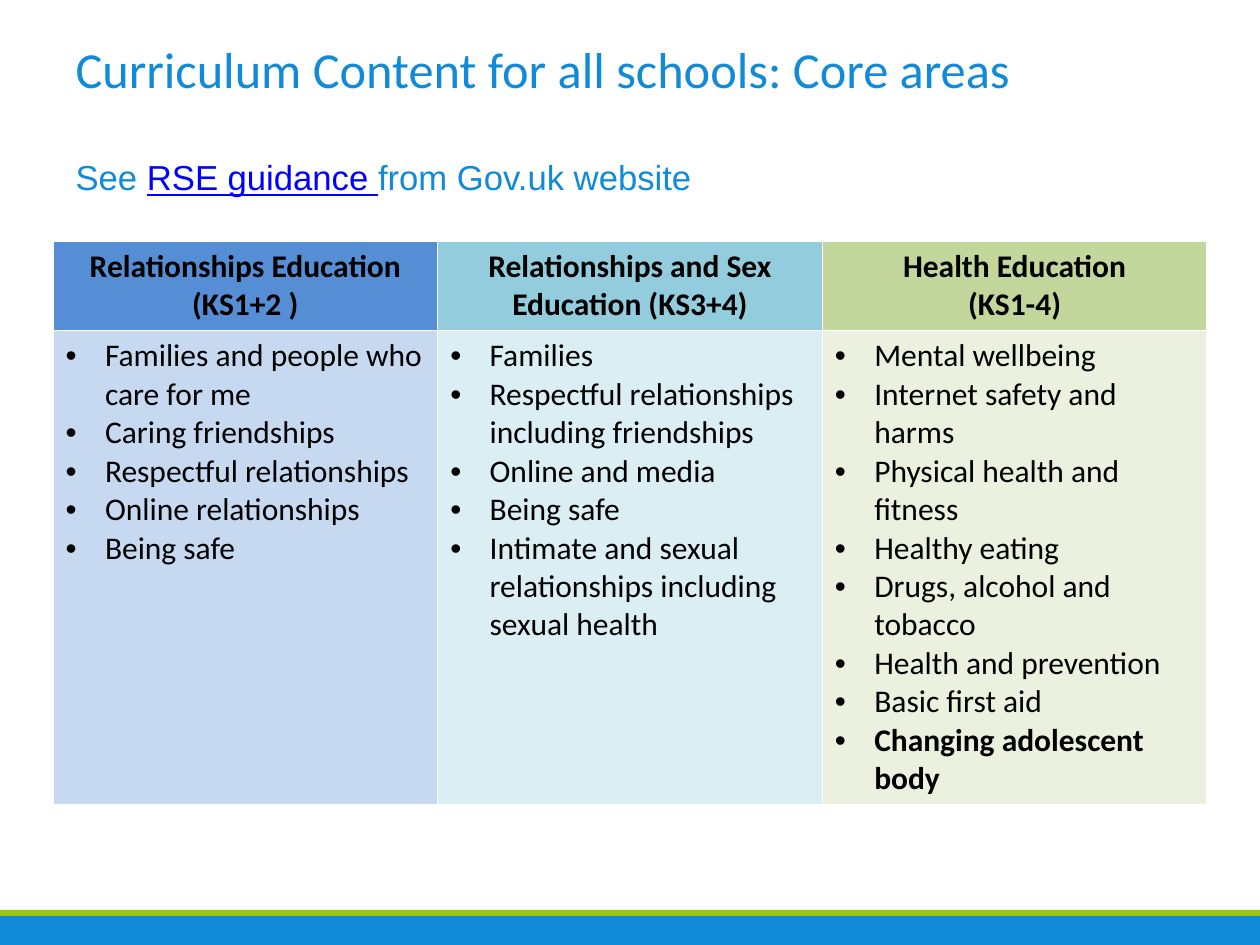
from lxml import etree
from pptx import Presentation
from pptx import util as u
from pptx.dml import color
from pptx.enum import shapes, text
from pptx.oxml import ns


def paint(fill, value):
    fill.solid()
    fill.fore_color.rgb = color.RGBColor.from_string(value)


def assign(target, values):
    for name, value in values.items():
        setattr(target, name, value)


presentation = Presentation()
assign(presentation, {"slide_width": u.Pt(720), "slide_height": u.Pt(540)})
slide = presentation.slides.add_slide(presentation.slide_layouts[5])

for top, height, shade in [(520, 10.8, "A0C50D"), (523.4, 16.6, "118AD7")]:
    band = slide.shapes.add_shape(
        shapes.MSO_SHAPE.RECTANGLE, u.Pt(0), u.Pt(top), u.Pt(720), u.Pt(height))
    band.shadow.inherit = False
    band.line.fill.background()
    paint(band.fill, shade)

title = slide.shapes.title
assign(title, {"left": u.Pt(36), "top": u.Pt(21.6), "width": u.Pt(648), "height": u.Pt(90)})
assign(title.text_frame, {
    "word_wrap": True, "auto_size": text.MSO_AUTO_SIZE.NONE,
    "vertical_anchor": text.MSO_ANCHOR.TOP, "margin_top": 0, "margin_bottom": 0})
title_lines = [
    (0, "Calibri", 28.8, [("Curriculum Content for all schools: Core areas", "118AD7", False)]),
    (33, "Arial", 19.8, [("See ", "118AD7", False), ("RSE guidance ", "0000FF", True),
                         ("from Gov.uk website", "118AD7", False)]),
]
for index, (space, font_name, size, pieces) in enumerate(title_lines):
    paragraph = title.text_frame.add_paragraph() if index else title.text_frame.paragraphs[0]
    assign(paragraph, {"alignment": text.PP_ALIGN.LEFT, "space_before": u.Pt(space)})
    for wording, shade, underline in pieces:
        run = paragraph.add_run()
        run.text = wording
        assign(run.font, {"name": font_name, "size": u.Pt(size), "underline": underline})
        paint(run.font.fill, shade)

columns = [
    ("Relationships Education\n(KS1+2 )", "558ED5", "C6D9F1", [
        "Families and people who care for me", "Caring friendships",
        "Respectful relationships", "Online relationships", "Being safe"]),
    ("Relationships and Sex Education (KS3+4)", "93CDDD", "DBEEF4", [
        "Families", "Respectful relationships including friendships",
        "Online and media", "Being safe",
        "Intimate and sexual relationships including sexual health"]),
    ("Health Education\n(KS1-4)", "C3D69B", "EBF1DE", [
        "Mental wellbeing", "Internet safety and harms", "Physical health and fitness",
        "Healthy eating", "Drugs, alcohol and tobacco", "Health and prevention",
        "Basic first aid", "Changing adolescent body"]),
]
bold_topic = "Changing adolescent body"
table = slide.shapes.add_table(
    2, len(columns), u.Pt(30.3), u.Pt(137.7), u.Pt(659.4), u.Pt(321.8)).table
for row, height in zip(table.rows, [50.9, 270.9]):
    row.height = u.Pt(height)

for column, (heading, heading_fill, body_fill, topics) in enumerate(columns):
    table.columns[column].width = u.Pt(219.8)
    for row, (wording, shade) in enumerate([(heading, heading_fill), ("\n".join(topics), body_fill)]):
        cell = table.cell(row, column)
        cell.text = wording
        paint(cell.fill, shade)
        for paragraph in cell.text_frame.paragraphs:
            paragraph.alignment = text.PP_ALIGN.LEFT if row else text.PP_ALIGN.CENTER
            if row:
                properties = paragraph._p.get_or_add_pPr()
                properties.set("marL", str(u.Pt(22.5)))
                properties.set("indent", str(u.Pt(-22.5)))
                etree.SubElement(properties, ns.qn("a:buFont")).set("typeface", "Arial")
                etree.SubElement(properties, ns.qn("a:buChar")).set("char", "•")
            for run in paragraph.runs:
                assign(run.font, {"name": "Calibri", "size": u.Pt(18),
                                  "bold": row == 0 or run.text == bold_topic})
                paint(run.font.fill, "000000")

presentation.save("out.pptx")
